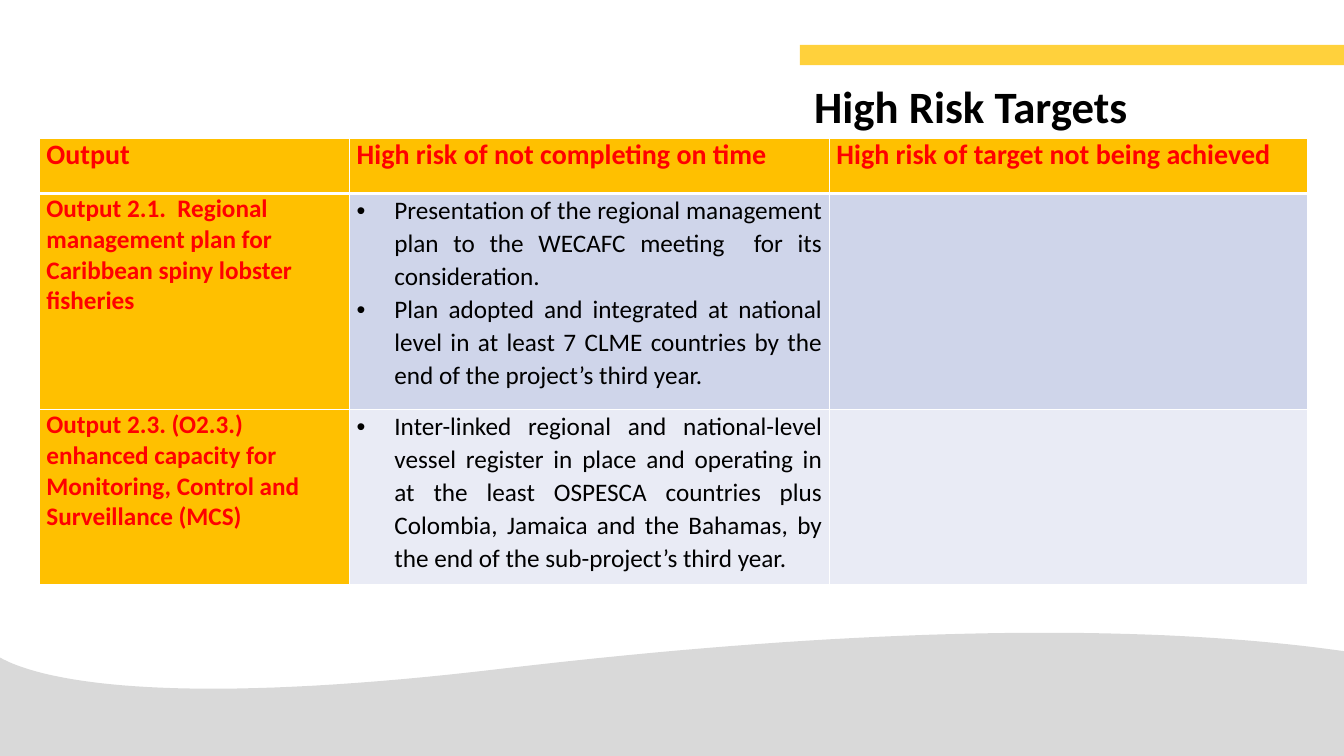
from dataclasses import dataclass

from lxml.etree import SubElement
from pptx import Presentation
from pptx.dml.color import RGBColor
from pptx.enum.shapes import MSO_SHAPE
from pptx.enum.text import MSO_ANCHOR, PP_ALIGN
from pptx.oxml import parse_xml
from pptx.oxml.ns import nsdecls, qn
from pptx.util import Cm, Pt


@dataclass(frozen=True)
class Theme:
    font: str = "Calibri"
    title_size: int = 32
    header_size: int = 20
    body_size: int = 18
    black: str = "000000"
    red: str = "FF0000"
    white: str = "FFFFFF"
    amber: str = "FFC000"
    accent: str = "FFD13C"
    wave: str = "D9D9D9"
    bands: tuple = ("CFD5EA", "E9EBF5")


theme = Theme()


def write(para, text, size=theme.body_size, color=theme.black, bold=False, bullet=False):
    if bullet:
        para.alignment = PP_ALIGN.JUSTIFY
        para.line_spacing = 1.07
        properties = para._p.get_or_add_pPr()
        properties.set("marL", str(Cm(0.95)))
        properties.set("indent", str(Cm(-0.95)))
        SubElement(properties, qn("a:buFont")).set("typeface", "Arial")
        SubElement(properties, qn("a:buChar")).set("char", "•")
    span = para.add_run()
    span.text = text
    span.font.name = theme.font
    span.font.size = Pt(size)
    span.font.bold = bold
    span.font.color.rgb = RGBColor.from_string(color)


def paint(shape, color):
    shape.shadow.inherit = False
    shape.fill.solid()
    shape.fill.fore_color.rgb = RGBColor.from_string(color)
    shape.line.fill.background()


deck = Presentation()
deck.slide_width = Cm(33.87)
deck.slide_height = Cm(19.05)
page = deck.slides.add_slide(deck.slide_layouts[6])

wave_curves = [
    ((33.87, 16.41), (29.59, 15.8), (22.91, 15.65), (12.75, 16.84)),
    ((12.75, 16.84), (3.38, 17.96), (0.66, 16.97), (-0.05, 16.54)),
]
steps = 40
crest = []
for curve in wave_curves:
    for step in range(steps + 1):
        t = step / steps
        weights = ((1 - t) ** 3, 3 * t * (1 - t) ** 2, 3 * t**2 * (1 - t), t**3)
        x, y = (sum(w * point[axis] for w, point in zip(weights, curve)) for axis in (0, 1))
        crest.append((Cm(x), Cm(y)))
builder = page.shapes.build_freeform(Cm(33.87), Cm(19.05))
builder.add_line_segments(crest + [(Cm(-0.05), Cm(19.05))], close=True)
paint(builder.convert_to_shape(), theme.wave)

accent_bar = page.shapes.add_shape(MSO_SHAPE.RECTANGLE, Cm(20.16), Cm(1.13), Cm(13.71), Cm(0.51))
paint(accent_bar, theme.accent)

title_box = page.shapes.add_textbox(Cm(20.27), Cm(1.86), Cm(12.67), Cm(1.62))
title_box.text_frame.word_wrap = True
write(title_box.text_frame.paragraphs[0], "High Risk Targets", size=theme.title_size, bold=True)

headers = ["Output", "High risk of not completing on time", "High risk of target not being achieved"]
outputs = [
    ["Output 2.1.  Regional management plan for Caribbean spiny lobster fisheries"],
    ["Output 2.3. (O2.3.) enhanced capacity for Monitoring, Control and Surveillance (MCS)"],
]
late_risks = [
    [
        "Presentation of the regional management plan to the WECAFC meeting  for its consideration.",
        "Plan adopted and integrated at national level in at least 7 CLME countries "
        "by the end of the project’s third year.",
    ],
    [
        "Inter-linked regional and national-level vessel register in place and operating in "
        "at the least OSPESCA countries plus Colombia, Jamaica and the Bahamas, "
        "by the end of the sub-project’s third year.",
    ],
]
rows = [[[header] for header in headers]]
rows += [[output, risks, []] for output, risks in zip(outputs, late_risks)]

column_widths = [7.82, 12.09, 12.04]
row_heights = [1.4, 5.44, 4.42]
table = page.shapes.add_table(
    len(rows), len(headers), Cm(0.99), Cm(3.48), Cm(sum(column_widths)), Cm(sum(row_heights))
).table
for column, width in zip(table.columns, column_widths):
    column.width = Cm(width)
for row, height in zip(table.rows, row_heights):
    row.height = Cm(height)

for row_index, row in enumerate(rows):
    for column_index, lines in enumerate(row):
        cell = table.cell(row_index, column_index)
        is_header = row_index == 0
        is_label = is_header or column_index == 0
        cell.margin_left = cell.margin_right = Cm(0.18)
        cell.margin_top = cell.margin_bottom = Cm(0)
        cell.vertical_anchor = MSO_ANCHOR.TOP
        cell.fill.solid()
        fill_color = theme.amber if is_label else theme.bands[row_index - 1]
        cell.fill.fore_color.rgb = RGBColor.from_string(fill_color)

        edges = {"lnL": 1, "lnR": 1, "lnT": 3 if row_index == 1 else 1, "lnB": 3 if is_header else 1}
        for position, (edge, width) in enumerate(edges.items()):
            border = parse_xml(
                f'<a:{edge} {nsdecls("a")} w="{Pt(width)}"><a:solidFill>'
                f'<a:srgbClr val="{theme.white}"/></a:solidFill></a:{edge}>'
            )
            cell._tc.get_or_add_tcPr().insert(position, border)

        for line_index, line in enumerate(lines):
            frame = cell.text_frame
            para = frame.add_paragraph() if line_index else frame.paragraphs[0]
            write(
                para,
                line,
                size=theme.header_size if is_header else theme.body_size,
                color=theme.red if is_label else theme.black,
                bold=is_label,
                bullet=not is_label,
            )

deck.save("out.pptx")
